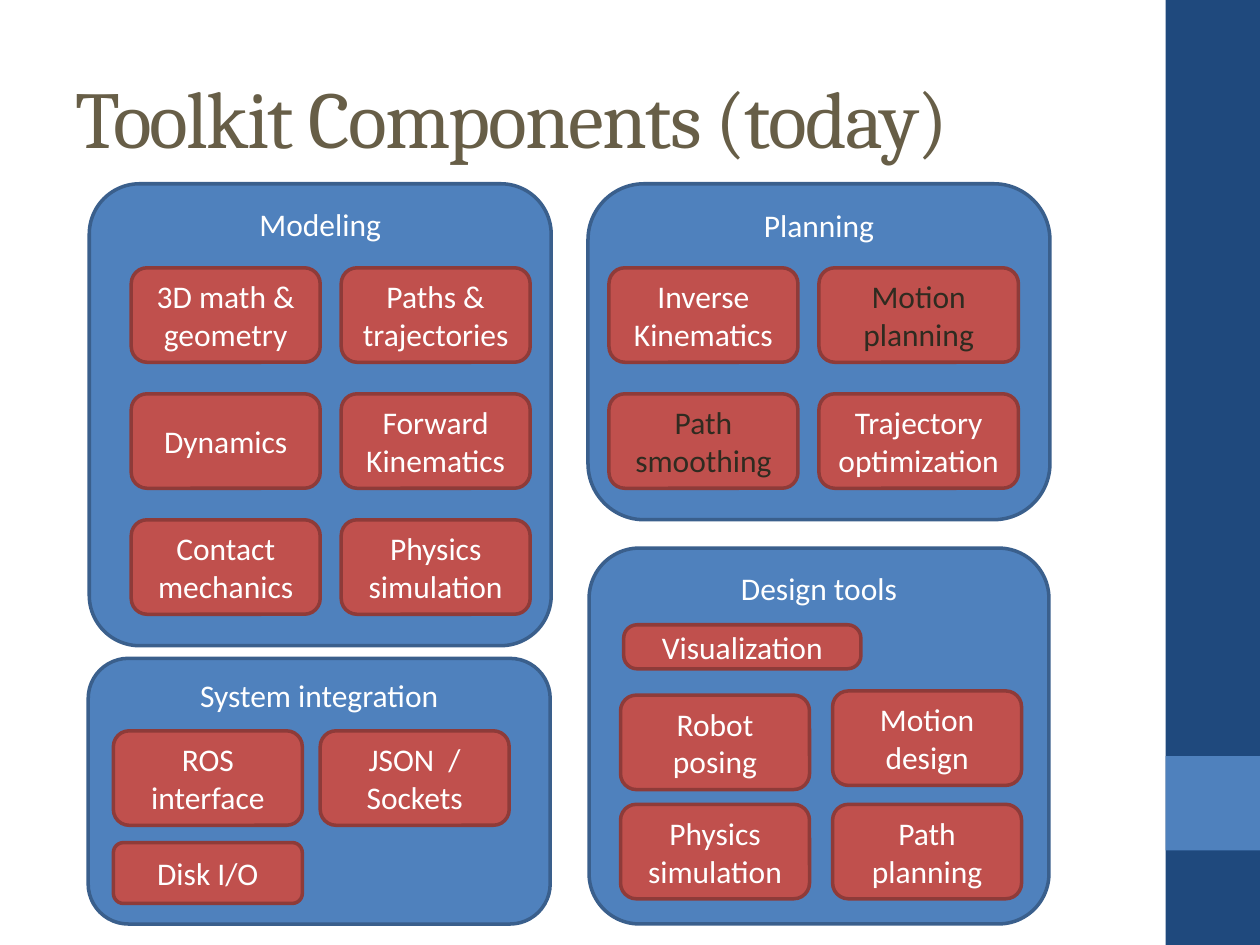
import dataclasses

import pptx
import pptx.dml.color
import pptx.enum.shapes
import pptx.enum.text
import pptx.util

SHAPE = pptx.enum.shapes.MSO_SHAPE
ALIGN = pptx.enum.text.PP_ALIGN
ANCHOR = pptx.enum.text.MSO_ANCHOR
COLUMNS, ROWS = 120, 90  # grid of the 10 x 7.5 inch slide, 12 cells to the inch


@dataclasses.dataclass(frozen=True)
class Theme:
    sidebar: str = "1F497D"
    panel: str = "4F81BD"
    panel_edge: str = "3A5F8C"
    component: str = "C0504D"
    component_edge: str = "8E3B39"
    light: str = "FFFFFF"
    dark: str = "2F2B20"
    heading: str = "675E47"
    heading_font: str = "Cambria"
    label_font: str = "Calibri"
    heading_size: int = 46
    label_size: int = 18
    edge_width: int = 2


def rgb(value):
    return pptx.dml.color.RGBColor.from_string(value)


def write_text(frame, text, *, font, size, color, align, anchor, spacing=None):
    frame.word_wrap = True
    frame.auto_size = pptx.enum.text.MSO_AUTO_SIZE.NONE
    frame.vertical_anchor = anchor
    paragraph = frame.paragraphs[0]
    paragraph.alignment = align
    run = paragraph.add_run()
    run.text = text
    run.font.name = font
    run.font.size = pptx.util.Pt(size)
    run.font.color.rgb = rgb(color)
    if spacing is not None:
        run.font._element.set("spc", str(round(spacing * 100)))


class Deck:
    def __init__(self, theme):
        self.theme = theme
        self.presentation = pptx.Presentation()
        self.presentation.slide_width = pptx.util.Inches(10)
        self.presentation.slide_height = pptx.util.Inches(7.5)
        self.slide = self.presentation.slides.add_slide(
            self.presentation.slide_layouts.get_by_name("Title Only"))

    def place(self, left, top, width, height):
        across = self.presentation.slide_width / COLUMNS
        down = self.presentation.slide_height / ROWS
        return (round(left * across), round(top * down),
                round(width * across), round(height * down))

    def title(self, text, box):
        heading = self.slide.shapes.title
        heading.left, heading.top, heading.width, heading.height = self.place(*box)
        write_text(heading.text_frame, text, font=self.theme.heading_font,
                   size=self.theme.heading_size, color=self.theme.heading,
                   align=ALIGN.LEFT, anchor=ANCHOR.MIDDLE, spacing=-1)

    def block(self, box, fill, edge=None, kind=SHAPE.RECTANGLE):
        block = self.slide.shapes.add_shape(kind, *self.place(*box))
        block.shadow.inherit = False
        block.fill.solid()
        block.fill.fore_color.rgb = rgb(fill)
        if edge:
            block.line.color.rgb = rgb(edge)
            block.line.width = pptx.util.Pt(self.theme.edge_width)
        else:
            block.line.fill.background()
        return block

    def rounded(self, text, box, fill, edge, corner, color, anchor):
        block = self.block(box, fill, edge, SHAPE.ROUNDED_RECTANGLE)
        block.adjustments[0] = corner
        write_text(block.text_frame, text, font=self.theme.label_font,
                   size=self.theme.label_size, color=color,
                   align=ALIGN.CENTER, anchor=anchor)

    def panel(self, text, box, corner):
        self.rounded(text, box, self.theme.panel, self.theme.panel_edge,
                     corner, self.theme.light, ANCHOR.TOP)

    def component(self, text, left, top, width=18, height=9, corner=0.167, dark=False):
        self.rounded(text, (left, top, width, height), self.theme.component,
                     self.theme.component_edge, corner,
                     self.theme.dark if dark else self.theme.light, ANCHOR.MIDDLE)


def main():
    theme = Theme()
    deck = Deck(theme)

    # Sidebar and title
    deck.block((111, 0, 9, ROWS), theme.sidebar)
    deck.block((111, 72, 9, 9), theme.panel)
    deck.title("Toolkit Components (today)", (6, 3.6, 100, 15))

    # Upper components share rows 12 cells apart
    first_row, row_step = 25.5, 12

    # Modeling
    deck.panel("Modeling", (8.5, 17.5, 44, 44), 0.109)
    modeling = [("3D math & geometry", "Paths & trajectories"),
                ("Dynamics", "Forward Kinematics"),
                ("Contact mechanics", "Physics simulation")]
    for row, names in enumerate(modeling):
        for column, name in enumerate(names):
            deck.component(name, 12.5 + 20 * column, first_row + row_step * row)

    # Planning
    deck.panel("Planning", (56, 17.5, 44, 32), 0.167)
    planning = [("Inverse Kinematics", "Motion planning"),
                ("Path smoothing", "Trajectory optimization")]
    for row, names in enumerate(planning):
        for column, name in enumerate(names):
            deck.component(name, 58 + 20 * column, first_row + row_step * row,
                           width=18 + column,
                           dark=name in ("Motion planning", "Path smoothing"))

    # System integration
    deck.panel("System integration", (8.4, 62.7, 44, 25.3), 0.151)
    deck.component("ROS interface", 10.8, 69.6)
    deck.component("JSON  / Sockets", 30.5, 69.6)
    deck.component("Disk I/O", 10.8, 80.25, height=5.8)

    # Design tools
    deck.panel("Design tools", (56.1, 52.2, 43.8, 35.8), 0.134)
    deck.component("Visualization", 59.4, 59.5, width=22.6, height=4.2, corner=0.306)
    for name, left, top in [("Robot posing", 59.1, 66.2), ("Motion design", 79.3, 65.8),
                            ("Physics simulation", 59.1, 76.6), ("Path planning", 79.3, 76.6)]:
        deck.component(name, left, top)

    deck.presentation.save("out.pptx")


if __name__ == "__main__":
    main()
